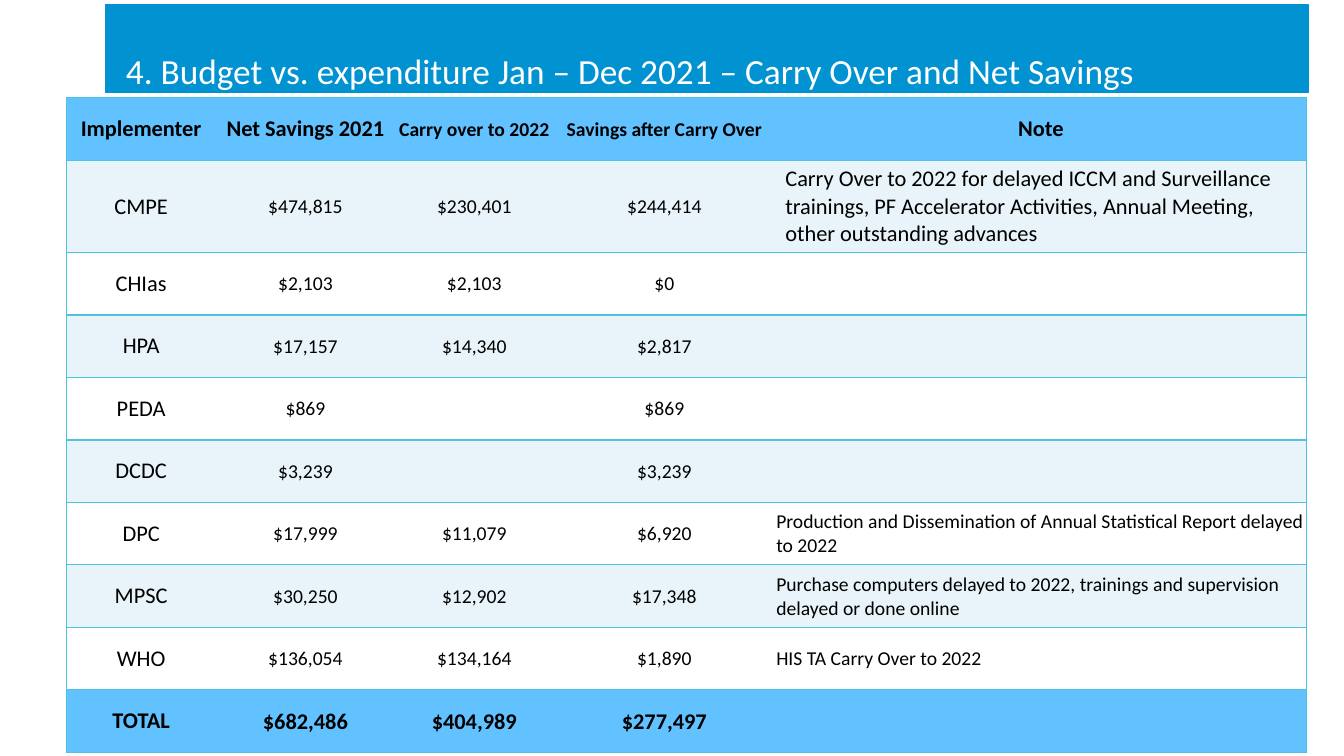
from typing import NamedTuple

from pptx import Presentation
from pptx import util as u
from pptx.dml.color import RGBColor
from pptx.enum import shapes, text
from pptx.oxml import parse_xml
from pptx.oxml.ns import nsdecls

FONT = "Calibri"
BANNER, HEADING, BAND, PLAIN, RULE = "0092D1", "62C2FF", "E8F4F9", "FFFFFF", "4EC3E0"
BLACK, WHITE = "000000", "FFFFFF"
ROOMY = (0.1, 0.05, 0.1, 0.05)
TIGHT = (0.01, 0.01, 0.01, 0)
COLUMN_WIDTHS = (1.48, 1.78, 1.57, 2.2, 5.27)
ROW_HEIGHT = 0.62


class CellStyle(NamedTuple):
    size: float
    margins: tuple[float, float, float, float]
    bold: bool = False
    centred: bool = True


class BudgetRow(NamedTuple):
    values: tuple[str, str, str, str, str]
    styles: tuple[CellStyle, ...]


NAME = CellStyle(16, ROOMY)
AMOUNT = CellStyle(14, TIGHT)
NOTE = CellStyle(14, TIGHT, centred=False)
LARGE_NOTE = CellStyle(16, ROOMY, centred=False)
HEAD = CellStyle(16, ROOMY, bold=True)
SMALL_HEAD = CellStyle(14, TIGHT, bold=True)
TOTAL = CellStyle(16, TIGHT, bold=True)

BODY_STYLES = (NAME, AMOUNT, AMOUNT, AMOUNT, NOTE)
ROWS = (
    BudgetRow(("Implementer", "Net Savings 2021", "Carry over to 2022",
               "Savings after Carry Over", "Note"),
              (HEAD, HEAD, SMALL_HEAD, SMALL_HEAD, HEAD)),
    BudgetRow(("CMPE", "$474,815", "$230,401", "$244,414",
               "Carry Over to 2022 for delayed ICCM and Surveillance trainings, "
               "PF Accelerator Activities, Annual Meeting, other outstanding advances"),
              (*BODY_STYLES[:4], LARGE_NOTE)),
    BudgetRow(("CHIas", "$2,103", "$2,103", "$0", ""), BODY_STYLES),
    BudgetRow(("HPA", "$17,157", "$14,340", "$2,817", ""), BODY_STYLES),
    BudgetRow(("PEDA", "$869", "", "$869", ""), BODY_STYLES),
    BudgetRow(("DCDC", "$3,239", "", "$3,239", ""), BODY_STYLES),
    BudgetRow(("DPC", "$17,999", "$11,079", "$6,920",
               "Production and Dissemination of Annual Statistical Report delayed to 2022"),
              BODY_STYLES),
    BudgetRow(("MPSC", "$30,250", "$12,902", "$17,348",
               "Purchase computers delayed to 2022, trainings and supervision "
               "delayed or done online"), BODY_STYLES),
    BudgetRow(("WHO", "$136,054", "$134,164", "$1,890", "HIS TA Carry Over to 2022"),
              BODY_STYLES),
    BudgetRow(("TOTAL", "$682,486", "$404,989", "$277,497", ""),
              (HEAD, TOTAL, TOTAL, TOTAL, NOTE)),
)


def colour(value: str) -> RGBColor:
    return RGBColor.from_string(value)


def add_run(paragraph, words: str, size: float, hue: str, bold: bool = False) -> None:
    run = paragraph.add_run()
    run.text = words
    run.font.name = FONT
    run.font.size = u.Pt(size)
    run.font.bold = bold
    run.font.color.rgb = colour(hue)


def set_margins(target, margins: tuple[float, float, float, float]) -> None:
    for side, margin in zip(("left", "top", "right", "bottom"), margins):
        setattr(target, f"margin_{side}", u.Inches(margin))


def set_borders(cell, ruled_sides: str) -> None:
    """Rule the sides named by the letters L, R, T and B, and clear the others."""
    properties = cell._tc.get_or_add_tcPr()
    for side in "LRTB":
        paint = (f'<a:solidFill><a:srgbClr val="{RULE}"/></a:solidFill>'
                 if side in ruled_sides else "<a:noFill/>")
        properties.append(parse_xml(
            f'<a:ln{side} {nsdecls("a")} w="{u.Pt(1)}">{paint}</a:ln{side}>'))


def fill_cell(cell, words: str, style: CellStyle, fill: str, ruled_sides: str) -> None:
    set_borders(cell, ruled_sides)
    cell.fill.solid()
    cell.fill.fore_color.rgb = colour(fill)
    cell.vertical_anchor = text.MSO_ANCHOR.MIDDLE
    set_margins(cell, style.margins)
    paragraph = cell.text_frame.paragraphs[0]
    paragraph.alignment = text.PP_ALIGN.CENTER if style.centred else text.PP_ALIGN.LEFT
    if words:
        add_run(paragraph, words, style.size, BLACK, style.bold)


def add_banner(slide) -> None:
    banner = slide.shapes.add_shape(shapes.MSO_SHAPE.RECTANGLE, u.Inches(1.05),
                                    u.Inches(0.05), u.Inches(11.93), u.Inches(0.87))
    banner.shadow.inherit = False
    banner.fill.solid()
    banner.fill.fore_color.rgb = colour(BANNER)
    banner.line.color.rgb = colour(BANNER)
    banner.line.width = u.Pt(0.75)
    frame = banner.text_frame
    frame.word_wrap = True
    frame.vertical_anchor = text.MSO_ANCHOR.MIDDLE
    set_margins(frame, (0.2, 0, 0, 0))
    paragraph = frame.paragraphs[0]
    paragraph.alignment = text.PP_ALIGN.LEFT
    paragraph.line_spacing = 2.0
    add_run(paragraph, "4. Budget vs. expenditure Jan – Dec 2021 – Carry Over and Net Savings",
            25.2, WHITE)


def add_budget_table(slide) -> None:
    last_row, last_column = len(ROWS) - 1, len(COLUMN_WIDTHS) - 1
    table = slide.shapes.add_table(
        len(ROWS), len(COLUMN_WIDTHS), u.Inches(0.66), u.Inches(0.97),
        u.Inches(sum(COLUMN_WIDTHS)), u.Inches(ROW_HEIGHT * len(ROWS))).table
    table.first_row = table.horz_banding = False
    for column, width in zip(table.columns, COLUMN_WIDTHS):
        column.width = u.Inches(width)
    for row_index, row in enumerate(ROWS):
        table.rows[row_index].height = u.Inches(ROW_HEIGHT)
        if row_index in (0, last_row):
            fill = HEADING
        else:
            fill = BAND if row_index % 2 else PLAIN
        for column_index, (words, style) in enumerate(zip(row.values, row.styles)):
            outer_side = {0: "L", last_column: "R"}.get(column_index, "")
            fill_cell(table.cell(row_index, column_index), words, style, fill,
                      "TB" + outer_side)


def main() -> None:
    presentation = Presentation()
    presentation.slide_width = u.Inches(13.33)
    presentation.slide_height = u.Inches(7.5)
    slide = presentation.slides.add_slide(presentation.slide_layouts[6])
    add_banner(slide)
    add_budget_table(slide)
    presentation.save("out.pptx")


if __name__ == "__main__":
    main()
